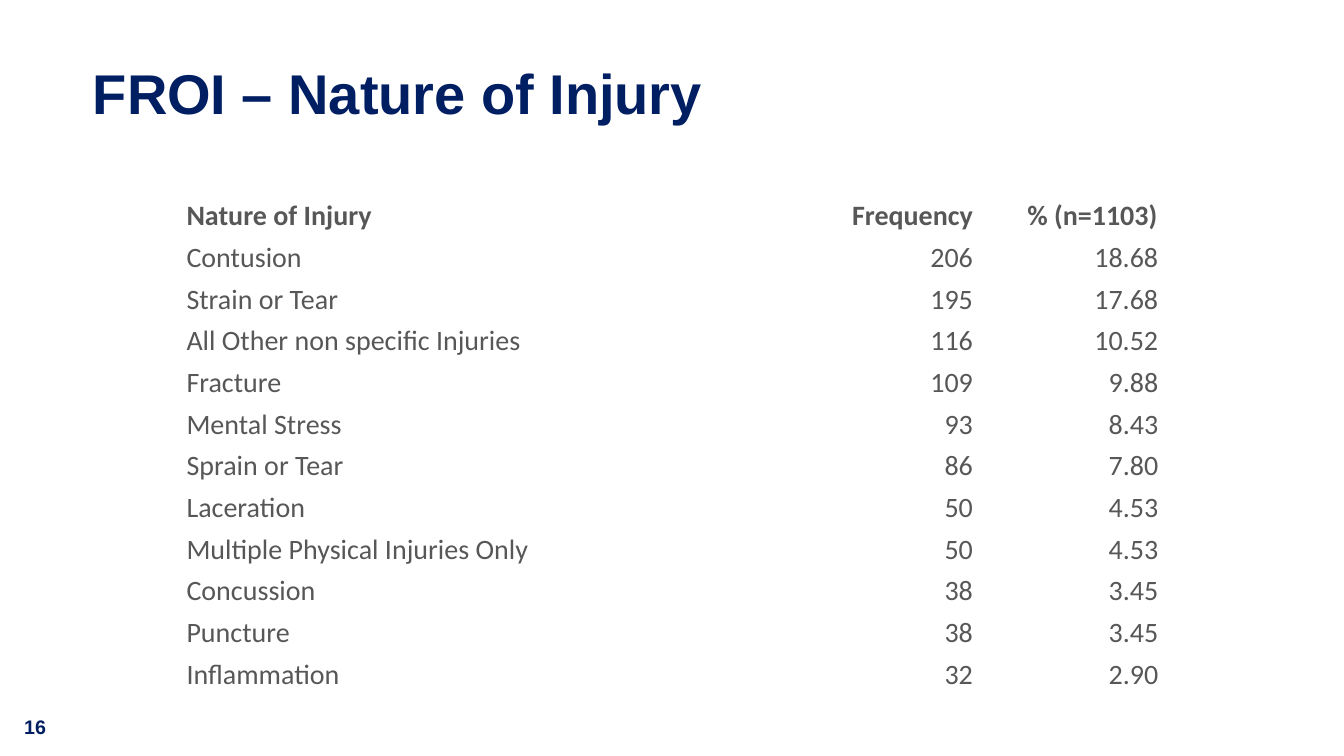
import pptx
import pptx.util
import pptx.dml.color
import pptx.enum.text

Cm = pptx.util.Cm
Pt = pptx.util.Pt
ALIGN = pptx.enum.text.PP_ALIGN
ANCHOR = pptx.enum.text.MSO_ANCHOR

COLOURS = {"title": "001E62", "number": "001E61", "table": "575757"}

INJURIES = [
    ("Nature of Injury", "Frequency", "% (n=1103)"),
    ("Contusion", "206", "18.68"),
    ("Strain or Tear", "195", "17.68"),
    ("All Other non specific Injuries", "116", "10.52"),
    ("Fracture", "109", "9.88"),
    ("Mental Stress", "93", "8.43"),
    ("Sprain or Tear", "86", "7.80"),
    ("Laceration", "50", "4.53"),
    ("Multiple Physical Injuries Only", "50", "4.53"),
    ("Concussion", "38", "3.45"),
    ("Puncture", "38", "3.45"),
    ("Inflammation", "32", "2.90"),
]
COLUMN_WIDTHS = [Cm(15.27), Cm(4.65), Cm(4.65)]
ROW_HEIGHT = Cm(1.05)


def add_span(para, text, size, font, colour, bold):
    span = para.add_run()
    span.text = text
    span.font.size = Pt(size)
    span.font.name = font
    span.font.bold = bold
    span.font.color.rgb = pptx.dml.color.RGBColor.from_string(COLOURS[colour])


def set_margins(target, left, top, right, bottom):
    target.margin_left, target.margin_top = Cm(left), Cm(top)
    target.margin_right, target.margin_bottom = Cm(right), Cm(bottom)


deck = pptx.Presentation()
deck.slide_width = Cm(33.87)
deck.slide_height = Cm(19.05)
page = deck.slides.add_slide(deck.slide_layouts[5])

# Title
title = page.shapes.title
title.left, title.top = Cm(2.34), Cm(0.94)
title.width, title.height = Cm(29.18), Cm(3)
frame = title.text_frame
frame.vertical_anchor = ANCHOR.MIDDLE
set_margins(frame, 0, 0, 0, 0)
para = frame.paragraphs[0]
para.alignment = ALIGN.LEFT
para.line_spacing = 0.9
add_span(para, "FROI – Nature of Injury", 40, "Arial", "title", True)

# Injury table
table = page.shapes.add_table(
    len(INJURIES), len(COLUMN_WIDTHS), Cm(4.65), Cm(4.83),
    sum(COLUMN_WIDTHS), ROW_HEIGHT * len(INJURIES)).table
table.first_row = False
table.horz_banding = False
for column, width in zip(table.columns, COLUMN_WIDTHS):
    column.width = width

for row_index, values in enumerate(INJURIES):
    table.rows[row_index].height = ROW_HEIGHT
    for column_index, value in enumerate(values):
        cell = table.cell(row_index, column_index)
        cell.fill.background()
        cell.vertical_anchor = ANCHOR.BOTTOM
        inset = 0.03 if row_index and column_index == 2 else 0.05
        set_margins(cell, inset, inset, inset, 0)
        para = cell.text_frame.paragraphs[0]
        para.alignment = ALIGN.RIGHT if column_index else ALIGN.LEFT
        add_span(para, value, 20, "Calibri", "table", row_index == 0)

# Page number
box = page.shapes.add_textbox(Cm(0.36), Cm(17.88), Cm(1.68), Cm(0.86))
box.text_frame.word_wrap = True
add_span(box.text_frame.paragraphs[0], "16", 14, "Arial", "number", True)

deck.save("out.pptx")
